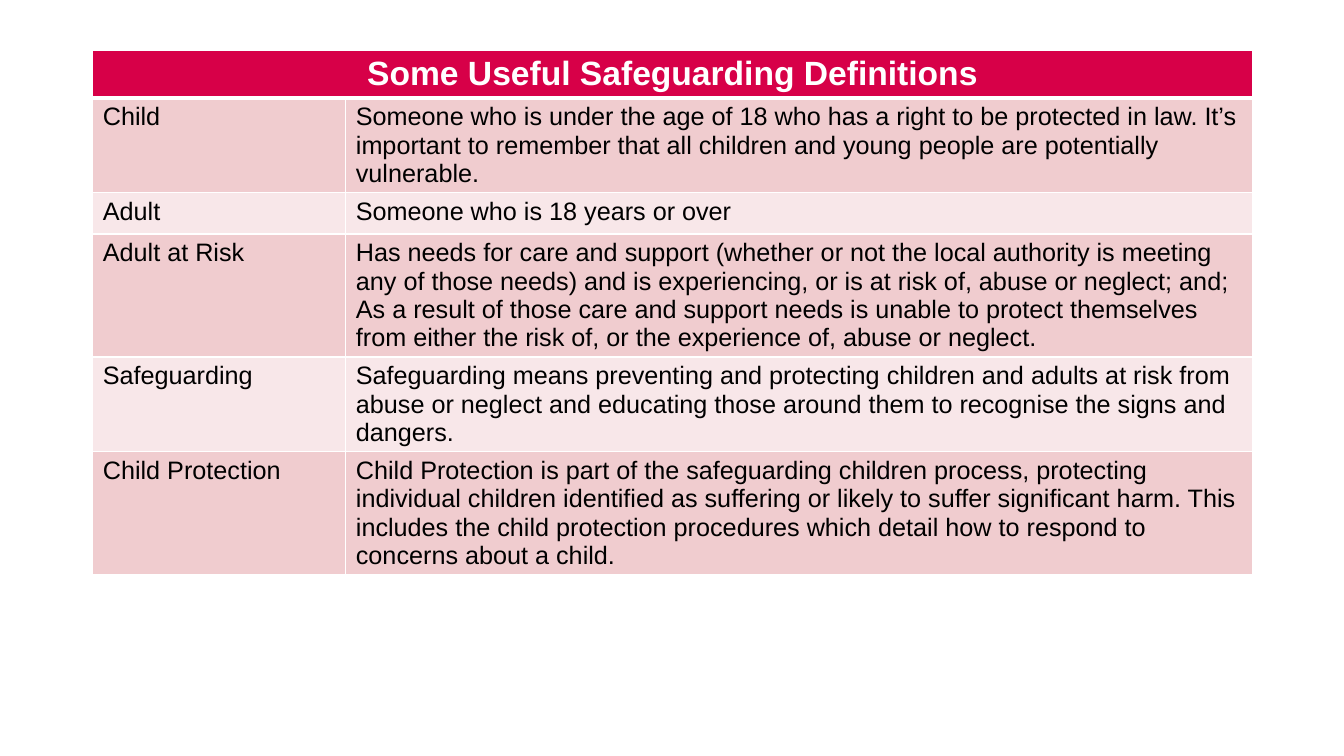
from dataclasses import dataclass

from lxml.etree import SubElement
from pptx import Presentation
from pptx.dml.color import RGBColor
from pptx.enum.text import PP_ALIGN
from pptx.oxml.ns import qn
from pptx.util import Inches, Pt

# Content
HEADING = "Some Useful Safeguarding Definitions"
DEFINITIONS = [
    ("Child",
     "Someone who is under the age of 18 who has a right to be protected in law. "
     "It’s important to remember that all children and young people are "
     "potentially vulnerable."),
    ("Adult", "Someone who is 18 years or over"),
    ("Adult at Risk",
     "Has needs for care and support (whether or not the local authority is meeting "
     "any of those needs) and is experiencing, or is at risk of, abuse or neglect; "
     "and; As a result of those care and support needs is unable to protect "
     "themselves from either the risk of, or the experience of, abuse or neglect."),
    ("Safeguarding",
     "Safeguarding means preventing and protecting children and adults at risk from "
     "abuse or neglect and educating those around them to recognise the signs and "
     "dangers."),
    ("Child Protection",
     "Child Protection is part of the safeguarding children process, protecting "
     "individual children identified as suffering or likely to suffer significant "
     "harm. This includes the child protection procedures which detail how to "
     "respond to concerns about a child."),
]


@dataclass(frozen=True)
class Theme:
    font: str = "Arial"
    heading_size: int = 24
    body_size: int = 18
    heading_fill: str = "D70048"
    bands: tuple = ("F0CCCF", "F8E7E9")
    light: str = "FFFFFF"
    dark: str = "000000"
    rule: int = 1
    heading_rule: int = 3


THEME = Theme()

# Layout in inches; rows grow to fit their text
SLIDE_WIDTH, SLIDE_HEIGHT = 13.33, 7.5
LEFT, TOP = 0.92, 0.5
COLUMNS = (2.51, 8.99)
ROW_HEIGHT, TABLE_HEIGHT = 0.41, 5.51


def add_borders(cell, top, bottom):
    properties = cell._tc.get_or_add_tcPr()
    sides = {"L": THEME.rule, "R": THEME.rule, "T": top, "B": bottom}
    for side, weight in sides.items():
        border = SubElement(properties, qn(f"a:ln{side}"), w=str(Pt(weight)))
        paint = SubElement(border, qn("a:solidFill"))
        SubElement(paint, qn("a:srgbClr"), val=THEME.light)


def style_cell(cell, fill, size, color, bold=False, top=THEME.rule, bottom=THEME.rule):
    add_borders(cell, top, bottom)
    cell.fill.solid()
    cell.fill.fore_color.rgb = RGBColor.from_string(fill)
    for run in cell.text_frame.paragraphs[0].runs:
        run.font.name = THEME.font
        run.font.size = Pt(size)
        run.font.bold = bold
        run.font.color.rgb = RGBColor.from_string(color)


def main():
    deck = Presentation()
    deck.slide_width, deck.slide_height = Inches(SLIDE_WIDTH), Inches(SLIDE_HEIGHT)
    slide = deck.slides.add_slide(deck.slide_layouts[6])

    # Table grid
    row_count = len(DEFINITIONS) + 1
    frame = slide.shapes.add_table(
        row_count, len(COLUMNS), Inches(LEFT), Inches(TOP),
        Inches(sum(COLUMNS)), Inches(ROW_HEIGHT * row_count))
    glossary = frame.table
    for column, width in zip(glossary.columns, COLUMNS):
        column.width = Inches(width)
    frame.height = Inches(TABLE_HEIGHT)

    # Heading across both columns
    heading = glossary.cell(0, 0)
    heading.merge(glossary.cell(0, 1))
    heading.text_frame.text = HEADING
    heading.text_frame.paragraphs[0].alignment = PP_ALIGN.CENTER
    for cell in glossary.rows[0].cells:
        style_cell(cell, THEME.heading_fill, THEME.heading_size, THEME.light,
                   bold=True, bottom=THEME.heading_rule)

    # Terms and meanings in alternating bands
    for index, definition in enumerate(DEFINITIONS):
        band = THEME.bands[index % len(THEME.bands)]
        top = THEME.heading_rule if index == 0 else THEME.rule
        for cell, wording in zip(glossary.rows[index + 1].cells, definition):
            cell.text_frame.text = wording
            style_cell(cell, band, THEME.body_size, THEME.dark, top=top)

    deck.save("out.pptx")


if __name__ == "__main__":
    main()
